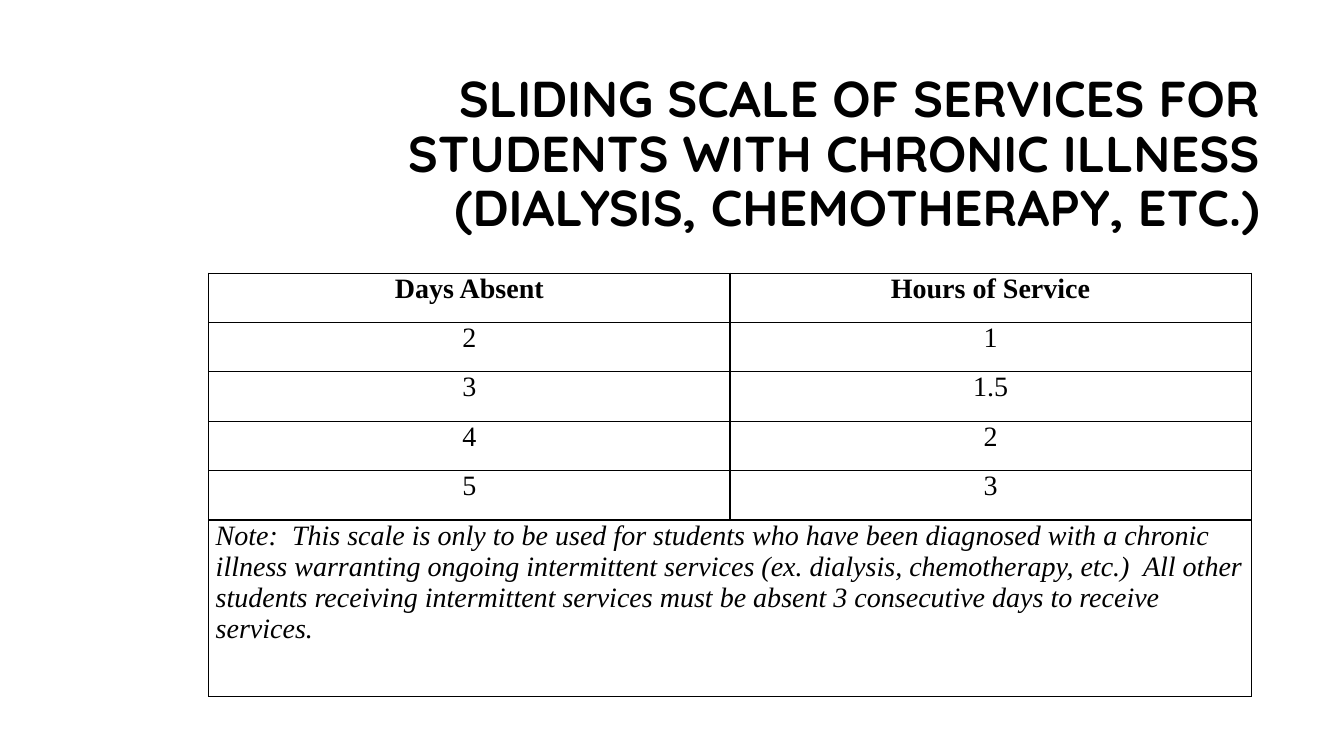
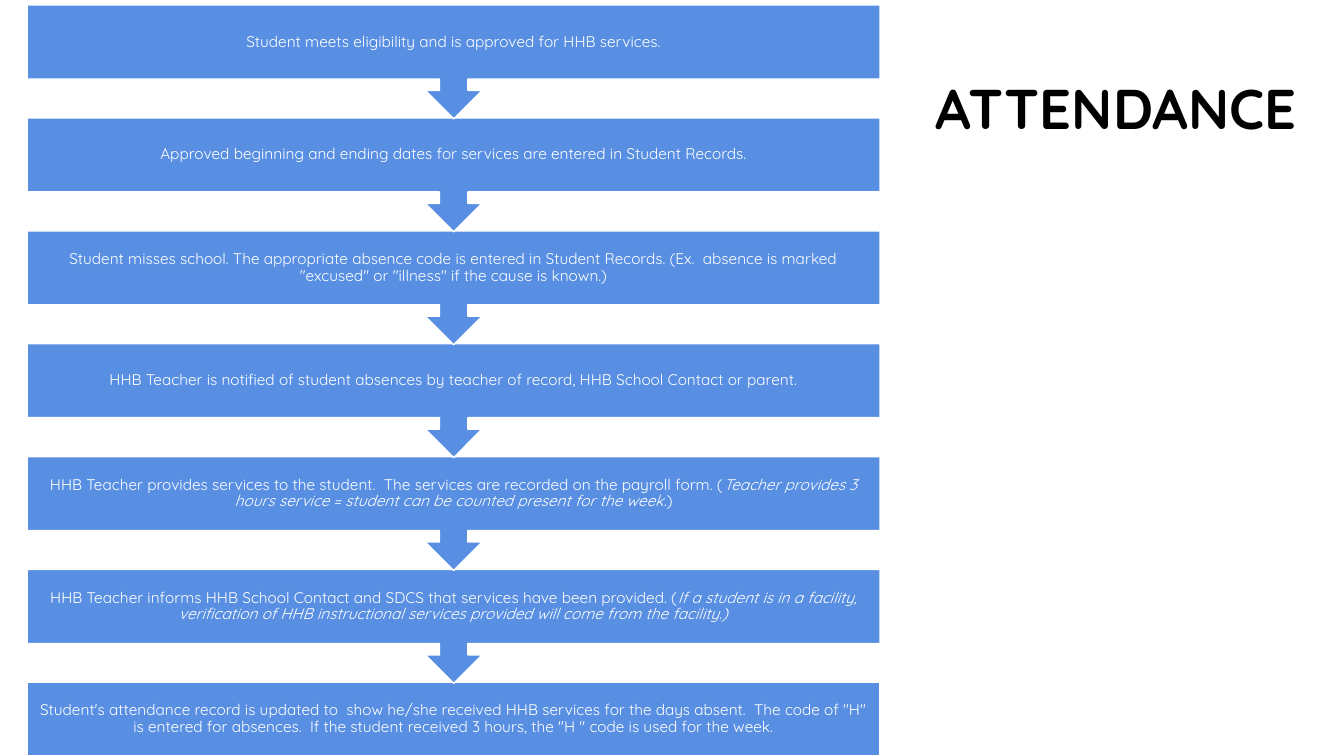
from dataclasses import dataclass
from typing import Any

from lxml import etree
from pptx import Presentation
from pptx import util as u
from pptx.dml.color import RGBColor
from pptx.enum import shapes, text
from pptx.oxml import ns

PX = 9144  # EMU: 100 px to the inch
BLACK, WHITE, BLUE = "000000", "FFFFFF", "588FE2"
SANS, SERIF = "Quicksand", "Times New Roman"
CENTER, RIGHT, LEFT = text.PP_ALIGN.CENTER, text.PP_ALIGN.RIGHT, text.PP_ALIGN.LEFT


@dataclass(frozen=True)
class Font:
    name: str
    size: int
    color: str = BLACK
    bold: bool = False


@dataclass(frozen=True)
class Run:
    words: str
    italic: bool = False


@dataclass(frozen=True)
class Box:
    x: int
    y: int
    w: int
    h: int

    def emu(self) -> tuple[int, ...]:
        return tuple(v * PX for v in (self.x, self.y, self.w, self.h))


CELL_FONT = Font(SERIF, 20)
HEAD_FONT = Font(SERIF, 20, bold=True)
STEP_FONT = Font(SANS, 11, WHITE)

SCALE_ROWS = [("Days Absent", "Hours of Service"), ("2", "1"), ("3", "1.5"), ("4", "2"), ("5", "3")]
SCALE_NOTE = (
    "Note:  This scale is only to be used for students who have been diagnosed with a chronic "
    "illness warranting ongoing intermittent services (ex. dialysis, chemotherapy, etc.)  All other "
    "students receiving intermittent services must be absent 3 consecutive days to receive services."
)

STEPS = [
    [Run("Student meets eligibility and is approved for HHB services.")],
    [Run("Approved beginning and ending dates for services are entered in Student Records.")],
    [Run("Student misses school. The appropriate absence code is entered in Student Records. "
         '(Ex.  absence is marked "excused" or "illness" if the cause is known.)')],
    [Run("HHB Teacher is notified of student absences by teacher of record, HHB School Contact or parent.")],
    [Run("HHB Teacher provides services to the student.  The services are recorded on the payroll form. ("),
     Run("Teacher provides 3 hours service = student can be counted present for the week", True),
     Run(".)")],
    [Run("HHB Teacher informs HHB School Contact and SDCS that services have been provided. ("),
     Run("If a student is in a facility, verification of HHB instructional services provided "
         "will come from the facility.)", True)],
    [Run("Student's attendance record is updated to  show he/she received HHB services for the days absent.  "
         'The code of "H" is entered for absences.  If the student received 3 hours, '
         'the "H " code is used for the week.')],
]


def rgb(color: str) -> RGBColor:
    return RGBColor.from_string(color)


def write(tf: Any, runs: list[Run], font: Font, align: Any, spacing: float = 1.0) -> None:
    tf.word_wrap = True
    p = tf.paragraphs[0]
    p.alignment = align
    p.line_spacing = spacing
    for run in runs:
        r = p.add_run()
        r.text = run.words
        r.font.name = font.name
        r.font.size = u.Pt(font.size)
        r.font.bold = font.bold
        r.font.italic = run.italic
        r.font.color.rgb = rgb(font.color)


def add_title(s: Any, words: str, box: Box, size: int) -> None:
    tf = s.shapes.add_textbox(*box.emu()).text_frame
    tf.vertical_anchor = text.MSO_ANCHOR.MIDDLE
    write(tf, [Run(words)], Font(SANS, size, bold=True), RIGHT, 0.9)


def style_cell(cell: Any) -> None:
    """Black 1 pt border on every side, no fill, narrow margins."""
    cell.margin_left = cell.margin_right = 7 * PX
    cell.margin_top = cell.margin_bottom = 0
    tc_pr = cell._tc.get_or_add_tcPr()
    for side in ("lnL", "lnR", "lnT", "lnB"):
        ln = etree.SubElement(tc_pr, ns.qn(f"a:{side}"), w=str(u.Pt(1)))
        fill = etree.SubElement(ln, ns.qn("a:solidFill"))
        etree.SubElement(fill, ns.qn("a:srgbClr"), val=BLACK)
    cell.fill.background()


def add_scale_table(s: Any) -> None:
    row_h, note_h = 49, 175
    count = len(SCALE_ROWS)
    box = Box(207, 271, 1034, count * row_h + note_h)
    table = s.shapes.add_table(count + 1, 2, *box.emu()).table
    table.first_row = table.horz_banding = False
    for row in table.rows:
        row.height = row_h * PX
    table.rows[count].height = note_h * PX
    for cell in table.iter_cells():
        style_cell(cell)
    for i, row in enumerate(SCALE_ROWS):
        for j, words in enumerate(row):
            write(table.cell(i, j).text_frame, [Run(words)], CELL_FONT if i else HEAD_FONT, CENTER)
    note = table.cell(count, 0)
    note.merge(table.cell(count, 1))
    write(note.text_frame, [Run(SCALE_NOTE, True)], CELL_FONT, LEFT)


def add_step(s: Any, kind: Any, box: Box, runs: list[Run]) -> None:
    sp = s.shapes.add_shape(kind, *box.emu())
    sp.shadow.inherit = False
    sp.fill.solid()
    sp.fill.fore_color.rgb = rgb(BLUE)
    sp.line.color.rgb = rgb(WHITE)
    sp.line.width = u.Pt(1)
    tf = sp.text_frame
    tf.margin_left = tf.margin_right = tf.margin_top = tf.margin_bottom = 9 * PX
    tf.vertical_anchor = text.MSO_ANCHOR.MIDDLE
    write(tf, runs, STEP_FONT, CENTER, 0.9)


def add_steps(s: Any) -> None:
    """Stack the steps from the bottom up, so each arrow lies over the next box."""
    top, pitch, last = 5, 112, len(STEPS) - 1
    for i in range(last, -1, -1):
        if i == last:
            kind, height = shapes.MSO_SHAPE.RECTANGLE, 73
        else:
            kind, height = shapes.MSO_SHAPE.DOWN_ARROW_CALLOUT, 113
        add_step(s, kind, Box(27, top + i * pitch, 846, height), STEPS[i])


def main() -> None:
    prs = Presentation()
    prs.slide_width, prs.slide_height = 1333 * PX, 750 * PX
    blank = prs.slide_layouts[6]

    s = prs.slides.add_slide(blank)
    add_title(s, "SLIDING SCALE OF SERVICES FOR STUDENTS WITH CHRONIC ILLNESS "
                 "(DIALYSIS, CHEMOTHERAPY, ETC.)", Box(317, 84, 942, 141), 36)
    add_scale_table(s)

    s = prs.slides.add_slide(blank)
    add_title(s, "ATTENDANCE", Box(354, 40, 942, 141), 40)
    add_steps(s)

    prs.save("out.pptx")


if __name__ == "__main__":
    main()
